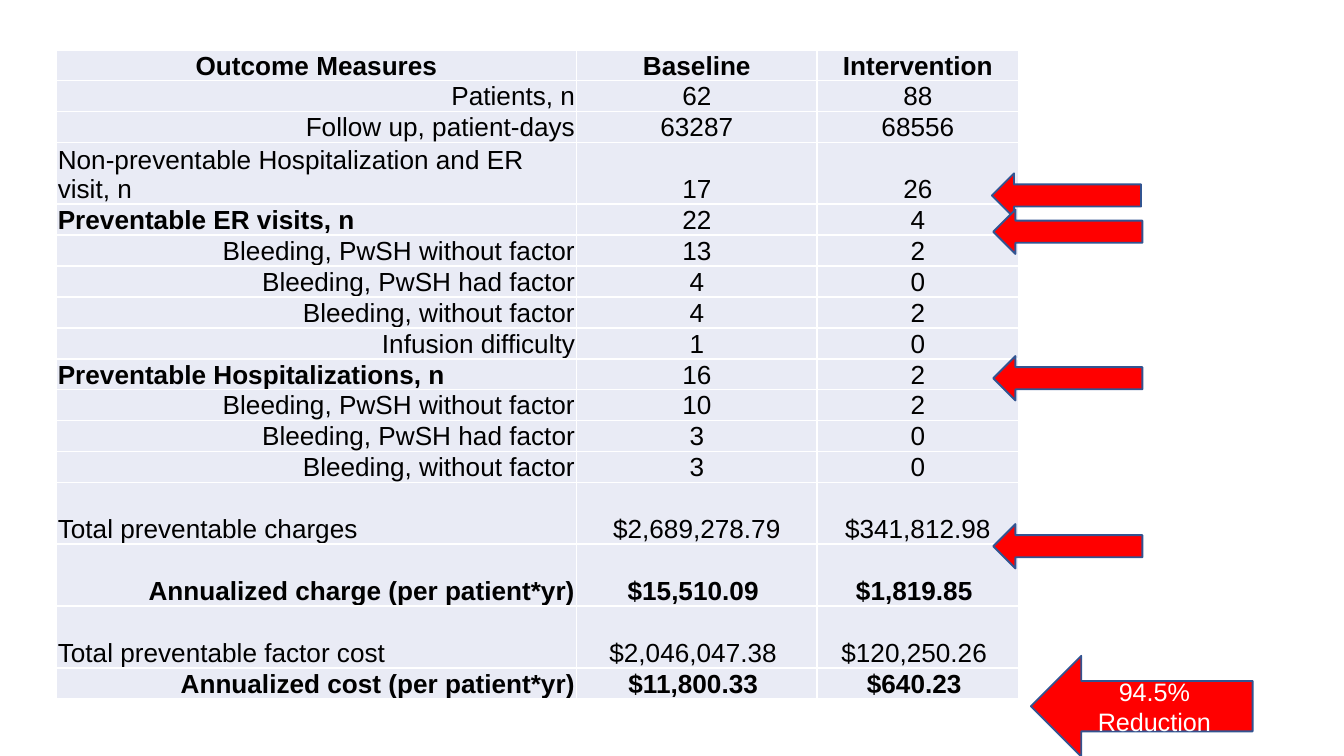
import pptx
import pptx.util
import pptx.dml.color
import pptx.enum.shapes
import pptx.enum.text
import pptx.oxml
import pptx.oxml.ns

Inches = pptx.util.Inches
Pt = pptx.util.Pt
RGBColor = pptx.dml.color.RGBColor
Align = pptx.enum.text.PP_ALIGN
Anchor = pptx.enum.text.MSO_ANCHOR

BLACK = RGBColor(0x00, 0x00, 0x00)
WHITE = RGBColor(0xFF, 0xFF, 0xFF)
RED = RGBColor(0xFF, 0x00, 0x00)
NAVY = RGBColor(0x32, 0x54, 0x91)
PALE = RGBColor(0xE9, 0xEB, 0xF5)

LEFT, CENTER, RIGHT = Align.LEFT, Align.CENTER, Align.RIGHT
SINGLE, DOUBLE = 0.23, 0.46
SLIDE_WIDTH = 10
SLIDE_HEIGHT = SLIDE_WIDTH * 9 / 16

# Each row: label, baseline, intervention, label alignment, bold label, bold values, height
ROWS = [
    ("Outcome Measures", "Baseline", "Intervention", CENTER, True, True, SINGLE),
    ("Patients, n", "62", "88", RIGHT, False, False, SINGLE),
    ("Follow up, patient-days", "63287", "68556", RIGHT, False, False, SINGLE),
    ("Non-preventable Hospitalization and ER visit, n", "17", "26", LEFT, False, False, DOUBLE),
    ("Preventable ER visits, n", "22", "4", LEFT, True, False, SINGLE),
    (" Bleeding, PwSH without factor", "13", "2", RIGHT, False, False, SINGLE),
    ("Bleeding, PwSH had factor", "4", "0", RIGHT, False, False, SINGLE),
    ("Bleeding, without factor", "4", "2", RIGHT, False, False, SINGLE),
    ("Infusion difficulty", "1", "0", RIGHT, False, False, SINGLE),
    ("Preventable Hospitalizations, n", "16", "2", LEFT, True, False, SINGLE),
    (" Bleeding, PwSH without factor", "10", "2", RIGHT, False, False, SINGLE),
    ("Bleeding, PwSH had factor", "3", "0", RIGHT, False, False, SINGLE),
    ("Bleeding, without factor", "3", "0", RIGHT, False, False, SINGLE),
    ("Total preventable charges", "$2,689,278.79", "$341,812.98", LEFT, False, False, DOUBLE),
    ("Annualized charge (per patient*yr)", "$15,510.09 ", "$1,819.85 ", RIGHT, True, True, DOUBLE),
    ("Total preventable factor cost", "$2,046,047.38 ", "$120,250.26 ", LEFT, False, False, DOUBLE),
    ("Annualized cost (per patient*yr)", "$11,800.33 ", "$640.23 ", RIGHT, True, True, SINGLE),
]
COLUMN_WIDTHS = [3.87, 1.79, 1.5]
ARROWS = [
    (7.67, 4.88, 1.65, 0.75, "94.5% Reduction"),
    (7.38, 1.29, 1.11, 0.33, ""),
    (7.39, 1.56, 1.11, 0.33, ""),
    (7.39, 2.65, 1.11, 0.33, ""),
    (7.39, 3.9, 1.11, 0.33, ""),
]
CELL_FORMAT = {
    "margin_left": Inches(0.01),
    "margin_right": Inches(0.01),
    "margin_top": Inches(0.01),
    "margin_bottom": 0,
    "vertical_anchor": Anchor.BOTTOM,
}


def apply(target, values):
    for name, value in values.items():
        setattr(target, name, value)


def write(para, text, align, size, color, bold=False):
    para.alignment = align
    span = para.add_run()
    span.text = text
    apply(span.font, {"name": "Arial", "size": Pt(size), "bold": bold})
    span.font.color.rgb = color


def add_borders(cell):
    properties = cell._tc.get_or_add_tcPr()
    for position, edge in enumerate(("lnL", "lnR", "lnT", "lnB")):
        properties.insert(position, pptx.oxml.parse_xml(
            f'<a:{edge} {pptx.oxml.ns.nsdecls("a")} w="{Pt(1)}">'
            f'<a:solidFill><a:srgbClr val="{WHITE}"/></a:solidFill></a:{edge}>'))


def add_outcomes(page):
    heights = [row[-1] for row in ROWS]
    table = page.shapes.add_table(
        len(ROWS), len(COLUMN_WIDTHS), Inches(0.42), Inches(0.37),
        Inches(sum(COLUMN_WIDTHS)), Inches(sum(heights))).table
    apply(table, {"first_row": False, "horz_banding": False})
    for column, width in zip(table.columns, COLUMN_WIDTHS):
        column.width = Inches(width)
    for line, (label, baseline, intervention, align, bold_label, bold_values, height) in zip(table.rows, ROWS):
        line.height = Inches(height)
        contents = [(label, align, bold_label),
                    (baseline, CENTER, bold_values),
                    (intervention, CENTER, bold_values)]
        for cell, (text, side, bold) in zip(line.cells, contents):
            apply(cell, CELL_FORMAT)
            cell.fill.solid()
            cell.fill.fore_color.rgb = PALE
            add_borders(cell)
            write(cell.text_frame.paragraphs[0], text, side, 14, BLACK, bold)


def add_arrow(page, left, top, width, height, text):
    arrow = page.shapes.add_shape(
        pptx.enum.shapes.MSO_SHAPE.LEFT_ARROW,
        Inches(left), Inches(top), Inches(width), Inches(height))
    arrow.shadow.inherit = False
    arrow.fill.solid()
    arrow.fill.fore_color.rgb = RED
    arrow.line.color.rgb = NAVY
    arrow.line.width = Pt(1)
    if text:
        apply(arrow.text_frame, {"word_wrap": True, "vertical_anchor": Anchor.MIDDLE})
        write(arrow.text_frame.paragraphs[0], text, CENTER, 13.5, WHITE)


def main():
    deck = pptx.Presentation()
    apply(deck, {"slide_width": Inches(SLIDE_WIDTH), "slide_height": Inches(SLIDE_HEIGHT)})
    page = deck.slides.add_slide(deck.slide_layouts[6])
    add_outcomes(page)
    for arrow in ARROWS:
        add_arrow(page, *arrow)
    deck.save("out.pptx")


if __name__ == "__main__":
    main()
